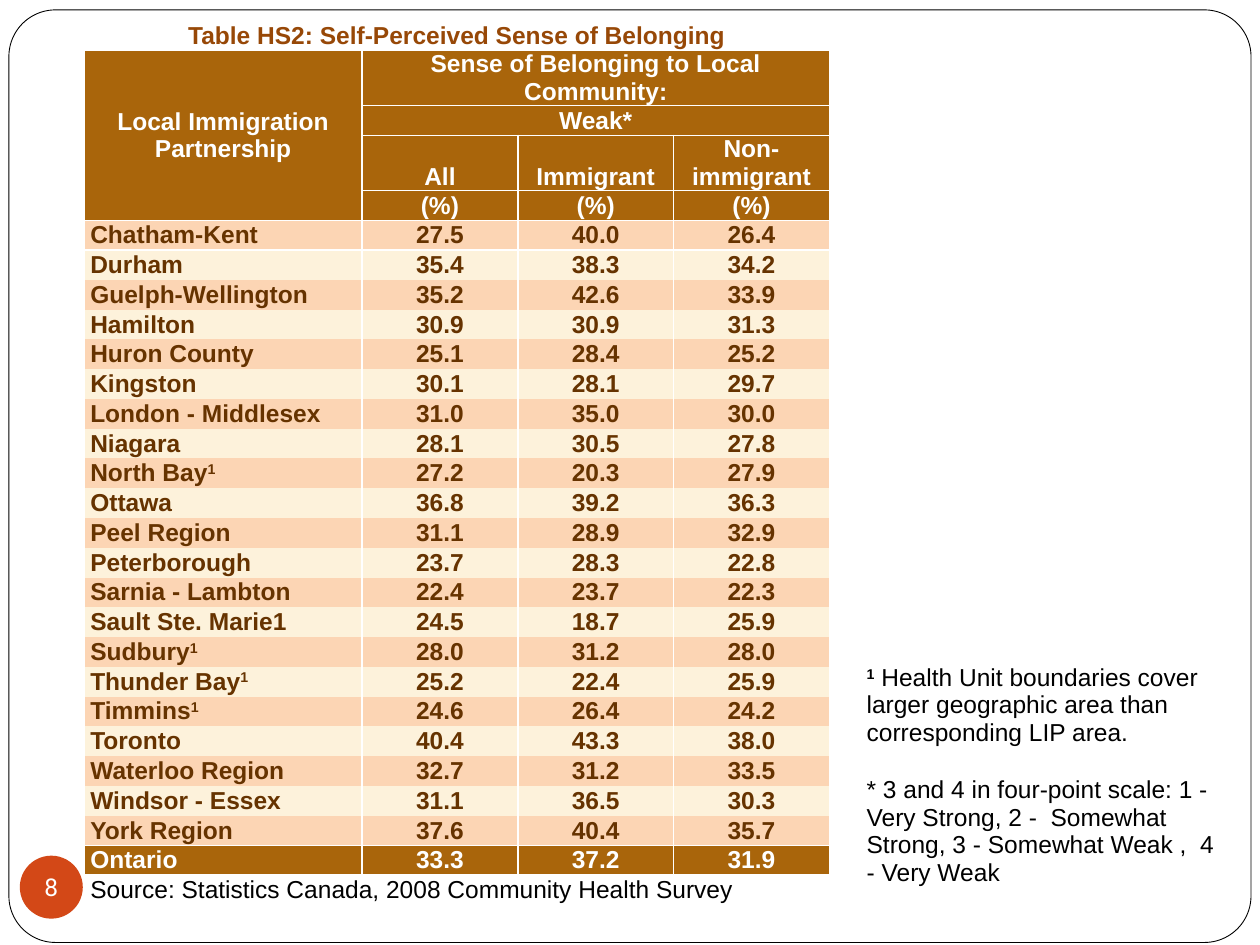
from lxml.etree import SubElement
from pptx import Presentation
from pptx.dml.color import RGBColor
from pptx.enum.shapes import MSO_SHAPE as Shape
from pptx.enum.text import MSO_ANCHOR as Anchor, PP_ALIGN as Align
from pptx.oxml.ns import qn
from pptx.util import Cm, Pt

# Content: "^" marks the superscript that follows a name
TITLE = "Table HS2: Self-Perceived Sense of Belonging"
SOURCE = "Source: Statistics Canada, 2008 Community Health Survey"
HEADER = [
    ["Local Immigration Partnership", "Sense of Belonging to Local Community:", "", ""],
    ["", "Weak*", "", ""],
    ["", "All", "Immigrant", "Non-immigrant"],
    ["", "(%)", "(%)", "(%)"],
]
PARTNERSHIPS = [
    ("Chatham-Kent", "27.5", "40.0", "26.4"),
    ("Durham", "35.4", "38.3", "34.2"),
    ("Guelph-Wellington", "35.2", "42.6", "33.9"),
    ("Hamilton", "30.9", "30.9", "31.3"),
    ("Huron County", "25.1", "28.4", "25.2"),
    ("Kingston", "30.1", "28.1", "29.7"),
    ("London - Middlesex", "31.0", "35.0", "30.0"),
    ("Niagara", "28.1", "30.5", "27.8"),
    ("North Bay^1", "27.2", "20.3", "27.9"),
    ("Ottawa", "36.8", "39.2", "36.3"),
    ("Peel Region", "31.1", "28.9", "32.9"),
    ("Peterborough", "23.7", "28.3", "22.8"),
    ("Sarnia - Lambton", "22.4", "23.7", "22.3"),
    ("Sault Ste. Marie1", "24.5", "18.7", "25.9"),
    ("Sudbury^1", "28.0", "31.2", "28.0"),
    ("Thunder Bay^1", "25.2", "22.4", "25.9"),
    ("Timmins^1", "24.6", "26.4", "24.2"),
    ("Toronto", "40.4", "43.3", "38.0"),
    ("Waterloo Region", "32.7", "31.2", "33.5"),
    ("Windsor - Essex", "31.1", "36.5", "30.3"),
    ("York Region", "37.6", "40.4", "35.7"),
]
ONTARIO = ("Ontario", "33.3", "37.2", "31.9")
NOTE_AREA = " Health Unit boundaries cover larger geographic area than corresponding LIP area."
NOTE_SCALE = ("* 3 and 4 in four-point scale: 1 - Very Strong, 2 -  Somewhat Strong, "
              "3 - Somewhat Weak ,  4 - Very Weak")

WHITE, BLACK, ORANGE = "FFFFFF", "000000", "D34817"
BROWN, DARK_BROWN, TITLE_BROWN = "A9650B", "663300", "974807"
BANDS = ("FCD5B4", "FDF2DB")
PLAIN_TABLE_STYLE = "{2D5ABB26-0587-4C30-8999-92F81FD0307C}"


def paint(target, color):
    """Give a fill a solid colour."""
    target.solid()
    target.fore_color.rgb = RGBColor.from_string(color)


def add_run(paragraph, text, color, bold=False, raised=False, font="Arial"):
    run = paragraph.add_run()
    run.text = text
    run.font.size, run.font.name, run.font.bold = Pt(14), font, bold
    paint(run.font.fill, color)
    if raised:
        run.font._element.set("baseline", "30000")


def add_plain_table(slide, left, top, widths, heights):
    frame = slide.shapes.add_table(len(heights), len(widths), Cm(left), Cm(top),
                                   Cm(sum(widths)), Cm(sum(heights)))
    table = frame.table
    table.first_row = table.horz_banding = False
    table._tbl.tblPr.find(qn("a:tableStyleId")).text = PLAIN_TABLE_STYLE
    for column, width in zip(table.columns, widths):
        column.width = Cm(width)
    for row, height in zip(table.rows, heights):
        row.height = Cm(height)
    for cell in table.iter_cells():
        cell.margin_left = cell.margin_right = Cm(0.12)
        cell.margin_top = cell.margin_bottom = 0
        cell.vertical_anchor = Anchor.MIDDLE
    return table


def add_borders(cell, sides):
    for side in sides:
        line = SubElement(cell._tc.get_or_add_tcPr(), qn(f"a:ln{side}"), w=str(Pt(1)))
        fill = SubElement(line, qn("a:solidFill"))
        SubElement(fill, qn("a:srgbClr"), val=WHITE)


def add_belonging_table(slide):
    rows = [[TITLE, "", "", ""], *HEADER, *PARTNERSHIPS, ONTARIO, [SOURCE, "", "", ""]]
    body = 1 + len(HEADER)
    last = len(rows) - 1
    total = last - 1
    heights = [0.6] * len(rows)
    heights[1], heights[3] = 1.09, 1.07
    table = add_plain_table(slide, 1.7, 0.42, [5.6, 3.14, 3.14, 3.14], heights)

    # Merged cells: first and last cell of each block
    for first, final in [((0, 0), (0, 3)), ((1, 0), (4, 0)), ((1, 1), (1, 3)),
                         ((2, 1), (2, 3)), ((last, 0), (last, 3))]:
        table.cell(*first).merge(table.cell(*final))

    ruled_above = {1, 2, 3, body, total, last}
    for r, row in enumerate(rows):
        if r == 0:
            fill, color = None, TITLE_BROWN
        elif r == last:
            fill, color = None, BLACK
        elif r < body or r == total:
            fill, color = BROWN, WHITE
        else:
            fill, color = BANDS[(r - body) % 2], DARK_BROWN
        for c, text in enumerate(row):
            cell = table.cell(r, c)
            if not cell.is_spanned:
                add_borders(cell, "LR" + "T" * (r in ruled_above)
                            + "B" * (r + 1 in ruled_above))
            if fill:
                paint(cell.fill, fill)
            if not text:
                continue
            paragraph = cell.text_frame.paragraphs[0]
            centred = c > 0 or r < body
            paragraph.alignment = Align.CENTER if centred else Align.LEFT
            name, _, mark = text.partition("^")
            add_run(paragraph, name, color, bold=r != last)
            if mark:
                add_run(paragraph, mark, color, bold=True, raised=True)
    for c in (1, 2):
        table.cell(3, c).vertical_anchor = Anchor.BOTTOM


def add_notes_table(slide):
    table = add_plain_table(slide, 17.35, 13.13, [2.77, 1.55, 1.55, 1.55], [2.18, 2.9])
    for r in range(2):
        table.cell(r, 0).merge(table.cell(r, 3))
    area, scale = (table.cell(r, 0).text_frame.paragraphs[0] for r in range(2))
    add_run(area, "1", BLACK, bold=True, raised=True)
    add_run(area, NOTE_AREA, BLACK)
    add_run(scale, NOTE_SCALE, BLACK)


def add_frame(slide):
    frame = slide.shapes.add_shape(Shape.ROUNDED_RECTANGLE, Cm(0.18), Cm(0.2),
                                   Cm(25.04), Cm(18.8))
    frame.shadow.inherit = False
    frame.adjustments[0] = 0.05
    paint(frame.fill, WHITE)
    paint(frame.line.fill, BLACK)
    frame.line.width = Pt(0.5)


def add_page_number(slide):
    badge = slide.shapes.add_shape(Shape.OVAL, Cm(0.4), Cm(17.25), Cm(1.27), Cm(1.27))
    badge.shadow.inherit = False
    paint(badge.fill, ORANGE)
    badge.line.fill.background()
    text = badge.text_frame
    text.margin_left = text.margin_right = text.margin_top = text.margin_bottom = 0
    text.word_wrap = False
    text.vertical_anchor = Anchor.MIDDLE
    text.paragraphs[0].alignment = Align.CENTER
    add_run(text.paragraphs[0], "8", WHITE, font="Roboto")


def main():
    presentation = Presentation()
    presentation.slide_width, presentation.slide_height = Cm(25.4), Cm(19.05)
    slide = presentation.slides.add_slide(presentation.slide_layouts[6])
    add_frame(slide)
    add_belonging_table(slide)
    add_notes_table(slide)
    add_page_number(slide)
    presentation.save("out.pptx")


if __name__ == "__main__":
    main()
